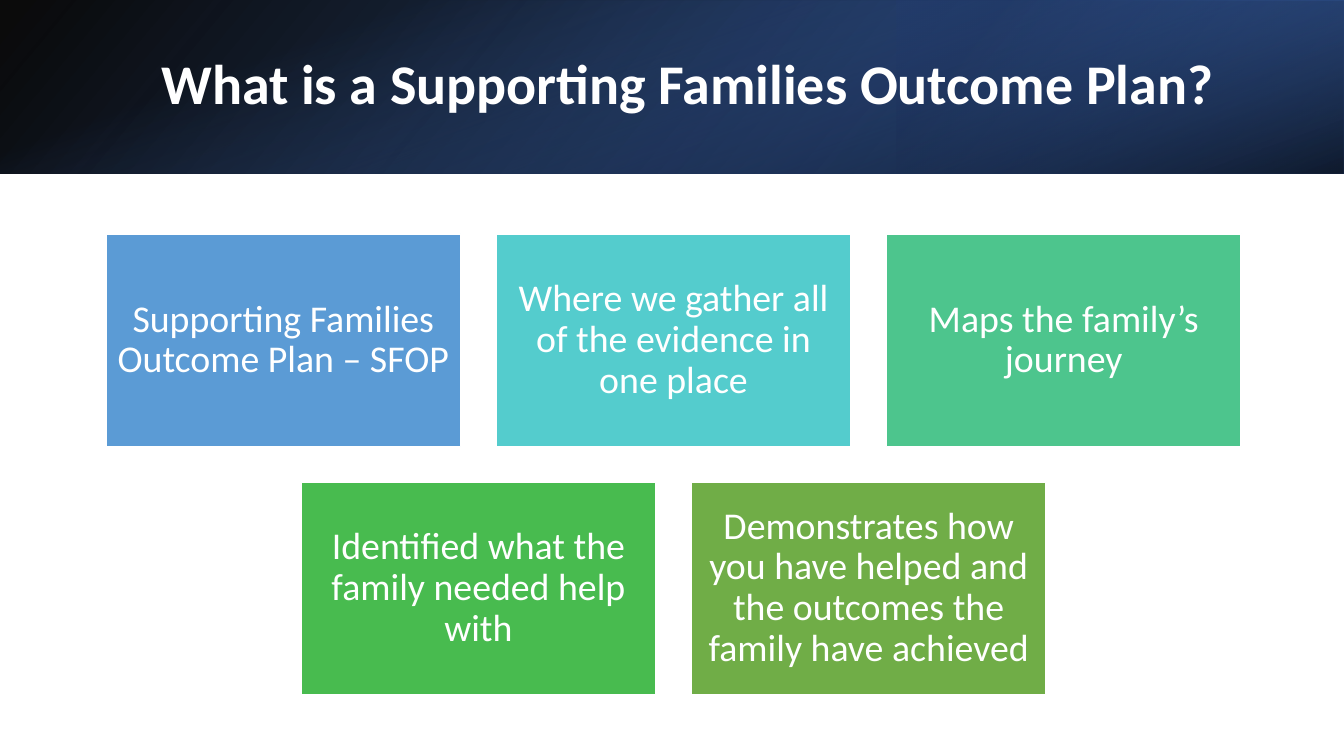
from lxml.etree import SubElement
from pptx import Presentation
from pptx.dml.color import RGBColor
from pptx.enum.shapes import MSO_SHAPE
from pptx.enum.text import MSO_ANCHOR, MSO_AUTO_SIZE, PP_ALIGN
from pptx.oxml.ns import qn
from pptx.util import Inches, Pt


def color(value):
    return RGBColor.from_string(value)


class SlideBuilder:
    font = "Calibri"
    white = "FFFFFF"

    def __init__(self, page):
        self.page = page

    def rectangle(self, left, top, width, height):
        box = self.page.shapes.add_shape(
            MSO_SHAPE.RECTANGLE,
            Inches(left), Inches(top), Inches(width), Inches(height))
        box.shadow.inherit = False
        return box

    def set_text(self, frame, text, size, align, margins, bold=False):
        frame.word_wrap = True
        frame.auto_size = MSO_AUTO_SIZE.NONE
        frame.vertical_anchor = MSO_ANCHOR.MIDDLE
        frame.margin_left = frame.margin_right = Inches(margins[0])
        frame.margin_top = frame.margin_bottom = Inches(margins[1])
        para = frame.paragraphs[0]
        para.alignment = align
        para.line_spacing = 0.9
        span = para.add_run()
        span.text = text
        span.font.name = self.font
        span.font.size = Pt(size)
        span.font.bold = bold
        span.font.color.rgb = color(self.white)

    def gradient_band(self, place, stops, angle, rotation=0, flip=False):
        """Each stop is (position %, colour, opacity %)."""
        band = self.rectangle(*place)
        band.rotation = rotation
        band.line.fill.background()
        properties = band._element.spPr
        if flip:
            properties.find(qn("a:xfrm")).set("flipH", "1")
        band.fill.gradient()
        gradient = properties.find(qn("a:gradFill"))
        for child in list(gradient):
            gradient.remove(child)
        stop_list = SubElement(gradient, qn("a:gsLst"))
        for position, value, opacity in stops:
            stop = SubElement(stop_list, qn("a:gs"), pos=str(position * 1000))
            tint = SubElement(stop, qn("a:srgbClr"), val=value)
            SubElement(tint, qn("a:alpha"), val=str(opacity * 1000))
        SubElement(gradient, qn("a:lin"), ang=str(angle * 60000), scaled="0")

    def title(self, text, left, top, width, height):
        box = self.page.shapes.title
        box.left, box.top = Inches(left), Inches(top)
        box.width, box.height = Inches(width), Inches(height)
        self.set_text(box.text_frame, text, 40, PP_ALIGN.LEFT, (0.1, 0.05), bold=True)
        # Bring the title in front of the bands
        self.page.shapes._spTree.append(box._element)

    def card(self, text, fill, left, top, width, height):
        box = self.rectangle(left, top, width, height)
        box.fill.solid()
        box.fill.fore_color.rgb = color(fill)
        box.line.color.rgb = color(self.white)
        box.line.width = Pt(1)
        self.set_text(box.text_frame, text, 27, PP_ALIGN.CENTER, (0.11, 0.11))


def main():
    deck = Presentation()
    deck.slide_width, deck.slide_height = Inches(13.33), Inches(7.5)
    builder = SlideBuilder(deck.slides.add_slide(deck.slide_layouts[5]))

    # Header bands
    builder.gradient_band((0, 0, 13.33, 1.72),
                          [(0, "000000", 96), (100, "2F5597", 100)], 140, flip=True)
    builder.gradient_band((8.89, 0, 4.44, 1.72),
                          [(19, "203864", 68), (100, "4472C4", 79)], 320,
                          rotation=180, flip=True)
    builder.gradient_band((5.8, -5.8, 1.72, 13.33),
                          [(23, "4472C4", 0), (99, "000000", 74)], 340, rotation=90)
    builder.title("What is a Supporting Families Outcome Plan?", 1.5, 0.38, 10.98, 0.96)

    # Cards, each row centred on the same axis
    rows = [
        [("Supporting Families Outcome Plan – SFOP", "5B9BD5"),
         ("Where we gather all of the evidence in one place", "54CCCD"),
         ("Maps the family’s journey", "4DC58D")],
        [("Identified what the family needed help with", "48BB4F"),
         ("Demonstrates how you have helped and the outcomes the family have achieved",
          "70AD47")],
    ]
    width, height, gap = 3.52, 2.11, 0.35
    center, first_top = 6.68, 2.32
    for row_index, row in enumerate(rows):
        row_left = center - (len(row) * (width + gap) - gap) / 2
        top = first_top + row_index * (height + gap)
        for column, (text, fill) in enumerate(row):
            builder.card(text, fill, row_left + column * (width + gap), top, width, height)

    deck.save("out.pptx")


if __name__ == "__main__":
    main()
